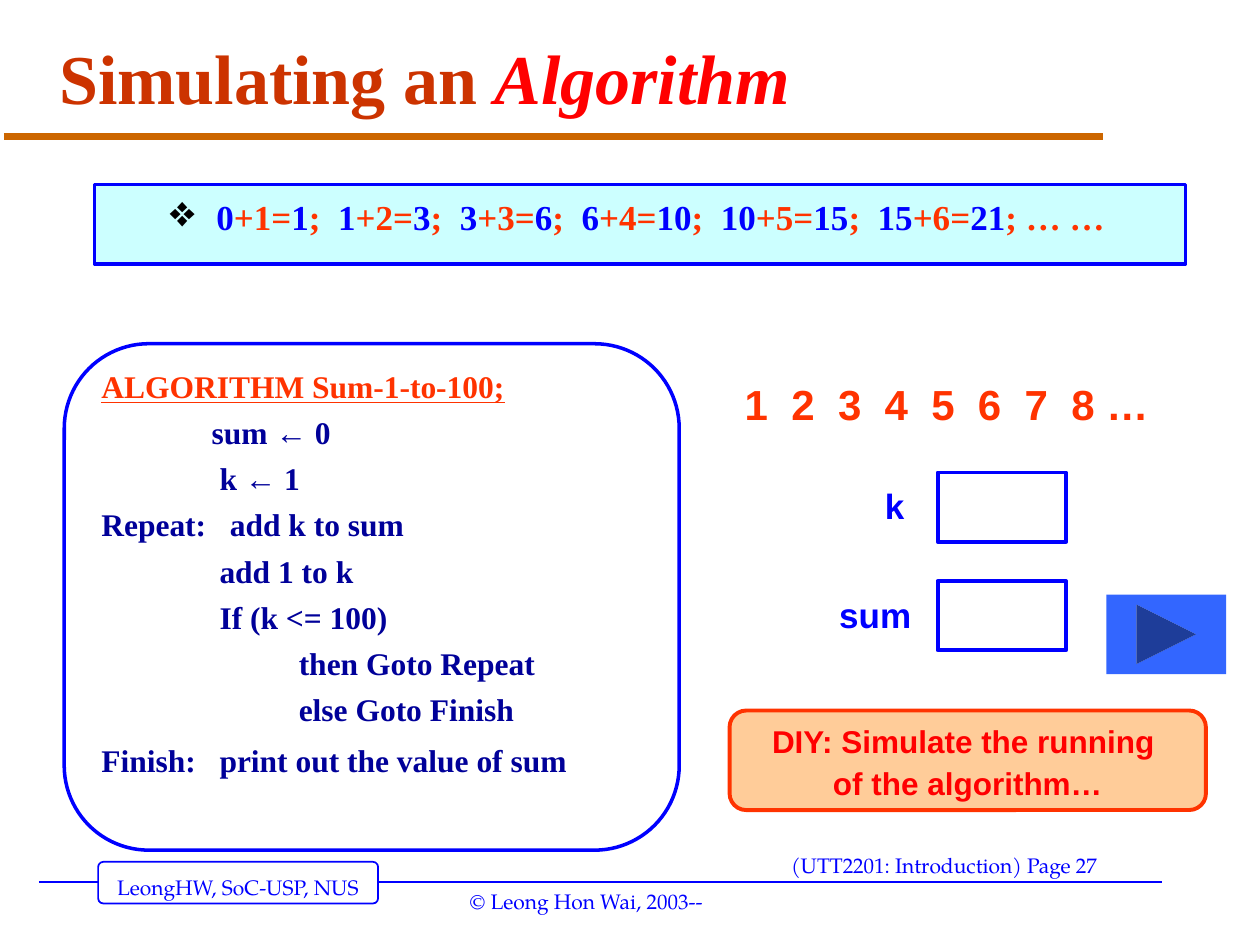
from lxml.etree import SubElement
from pptx import Presentation
from pptx.dml.color import RGBColor
from pptx.enum.shapes import MSO_CONNECTOR, MSO_SHAPE
from pptx.enum.text import MSO_ANCHOR, PP_ALIGN
from pptx.oxml.ns import qn
from pptx.util import Pt

COLORS = {
    "blue": "0000FF", "navy": "000099", "orange": "FF3300", "red": "FF0000",
    "rust": "CC3300", "rule": "CC6600", "white": "FFFFFF", "aqua": "CCFFFF",
    "peach": "FFCC99", "button": "3366FF", "black": "000000",
}
SERIF, SANS, FOOTER = "Times New Roman", "Arial", "TeX Gyre Pagella"


def rgb(name):
    return RGBColor.from_string(COLORS[name])


def add_line(page, start, end, color, width):
    line = page.shapes.add_connector(
        MSO_CONNECTOR.STRAIGHT, *(Pt(value) for value in start + end))
    line.line.color.rgb = rgb(color)
    line.line.width = Pt(width)
    SubElement(line._element.spPr, qn("a:effectLst"))


def add_box(page, kind, box, fill=None, line=None, width=2.0, corner=None):
    shape = page.shapes.add_shape(kind, *(Pt(value) for value in box))
    shape.shadow.inherit = False
    if fill:
        shape.fill.solid()
        shape.fill.fore_color.rgb = rgb(fill)
    else:
        shape.fill.background()
    if line:
        shape.line.color.rgb = rgb(line)
        shape.line.width = Pt(width)
    else:
        shape.line.fill.background()
    if corner:
        shape.adjustments[0] = corner
    return shape


def set_frame(shape, side=7.2, wrap=True, anchor=MSO_ANCHOR.TOP):
    """Set the insets and wrapping, and return the frame and its first paragraph."""
    frame = shape.text_frame
    frame.margin_left = frame.margin_right = Pt(side)
    frame.margin_top = frame.margin_bottom = Pt(3.6)
    frame.word_wrap = wrap
    frame.vertical_anchor = anchor
    frame.paragraphs[0].alignment = PP_ALIGN.LEFT
    return frame, frame.paragraphs[0]


def add_span(para, text, font, size, color, bold=True, italic=False, underline=False):
    span = para.add_run()
    span.text = text
    span.font.name = font
    span.font.size = Pt(size)
    span.font.color.rgb = rgb(color)
    span.font.bold = bold
    span.font.italic = italic
    span.font.underline = underline


def set_indent(para, left, first):
    props = para._p.get_or_add_pPr()
    props.set("marL", str(Pt(left)))
    props.set("indent", str(Pt(first)))
    return props


def add_label(page, box, text, font, size, color, side=3.6, wrap=False,
              bold=True, spacing=1.0):
    label = page.shapes.add_textbox(*(Pt(value) for value in box))
    _, para = set_frame(label, side, wrap)
    para.line_spacing = spacing
    add_span(para, text, font, size, color, bold)


def add_footer(page, left, top, width):
    add_line(page, (left, top), (left + width, top), "blue", 1)
    add_box(page, MSO_SHAPE.ROUNDED_RECTANGLE, (left + 33.8, top - 11.5, 160, 23.8),
            "white", "blue", 1, 0.125)
    for dx, dy, wide, text in (
        (37.5, -8, 154, "LeongHW, SoC-USP, NUS"),
        (422.7, -20.2, 190, "(UTT2201: Introduction) Page 27"),
        (239, 0, 149, "© Leong Hon Wai, 2003--"),
    ):
        add_label(page, (left + dx, top + dy, wide, 21.6), text, FOOTER, 12, "blue",
                  side=7.2, bold=False)


def add_title(page, left, top, width, height):
    add_line(page, (2.2, top + 62.8), (630, top + 62.8), "rule", 4)
    title = page.shapes.add_textbox(Pt(left), Pt(top), Pt(width), Pt(height))
    _, para = set_frame(title, anchor=MSO_ANCHOR.MIDDLE)
    para.line_spacing = 0.9
    add_span(para, "Simulating an ", SERIF, 40, "rust")
    add_span(para, "Algorithm", SERIF, 40, "red", italic=True)


def add_running_sums(page, box):
    shape = add_box(page, MSO_SHAPE.RECTANGLE, box, "aqua", "blue")
    _, para = set_frame(shape)
    para.line_spacing = 1.1
    props = set_indent(para, 62.6, -26.6)
    bullet_color = SubElement(props, qn("a:buClr"))
    SubElement(bullet_color, qn("a:srgbClr")).set("val", COLORS["black"])
    SubElement(props, qn("a:buSzPct")).set("val", "125000")
    SubElement(props, qn("a:buChar")).set("char", "❖")
    total, last = 0, 6
    for step in range(1, last + 1):
        ending = ";  " if step < last else "; … …"
        for text, color in ((str(total), "blue"), (f"+{step}=", "orange"),
                            (str(total + step), "blue"), (ending, "orange")):
            add_span(para, text, SERIF, 20, color)
        total += step


def add_algorithm(page, box):
    shape = add_box(page, MSO_SHAPE.ROUNDED_RECTANGLE, box, None, "blue", corner=0.167)
    frame, heading = set_frame(shape)
    heading.line_spacing = 0.8
    add_span(heading, "ALGORITHM Sum-1-to-100;", SERIF, 18, "orange", underline=True)
    # Left indent, first-line offset, text; a tab runs to the left indent.
    for left, first, text in (
        (63, 0, "sum ← 0"),
        (67.5, 0, "k ← 1"),
        (73.4, -73.4, "Repeat:\tadd k to sum"),
        (67.5, 0, "add 1 to k"),
        (67.5, 0, "If (k <= 100)"),
        (112.8, 0, "then Goto Repeat"),
        (112.8, 0, "else Goto Finish"),
        (67.5, -67.5, "Finish:\tprint out the value of sum"),
    ):
        para = frame.add_paragraph()
        para.alignment = PP_ALIGN.LEFT
        para.line_spacing = 0.8
        para.space_before = Pt(12 if text.startswith("Finish") else 9)
        set_indent(para, left, first)
        add_span(para, text, SERIF, 18, "navy")


def add_variables(page, left, top):
    """Place the number row and one empty value box per variable."""
    add_label(page, (left, top, 272, 36), "1  2  3  4  5  6  7  8 …", SANS, 24,
              "orange", wrap=True)
    for index, (name, dx, width) in enumerate((("k", 80, 24), ("sum", 54, 56))):
        y = top + 57 + 62 * index
        add_box(page, MSO_SHAPE.RECTANGLE, (left + 113.8, y, 73.4, 39.6),
                None, "blue", 2.25)
        add_label(page, (left + dx, y + 1, width, 33.8), name, SANS, 20, "blue",
                  wrap=True, spacing=1.1)


def add_exercise(page, box):
    shape = add_box(page, MSO_SHAPE.ROUNDED_RECTANGLE, box, "peach", "orange", 2.25, 0.167)
    _, para = set_frame(shape, 3.6, False, MSO_ANCHOR.MIDDLE)
    para.alignment = PP_ALIGN.CENTER
    para.line_spacing = 1.1
    add_span(para, "DIY: Simulate the running ", SANS, 18, "red")
    para.add_line_break()
    add_span(para, "of the algorithm…", SANS, 18, "red")


def main():
    deck = Presentation()
    deck.slide_width, deck.slide_height = Pt(720), Pt(540)
    page = deck.slides.add_slide(deck.slide_layouts[6])
    add_footer(page, 22.3, 504, 641.5)
    add_title(page, 26.8, 15.1, 645, 63.4)
    add_algorithm(page, (36.7, 196.4, 351.4, 289.4))
    add_running_sums(page, (54, 105.6, 623.5, 45.4))
    add_variables(page, 422, 213)
    add_exercise(page, (416.9, 406, 272.2, 56.9))
    add_box(page, MSO_SHAPE.ACTION_BUTTON_FORWARD_OR_NEXT, (632.2, 339.8, 68.4, 45.4),
            "button")
    deck.save("out.pptx")


if __name__ == "__main__":
    main()
